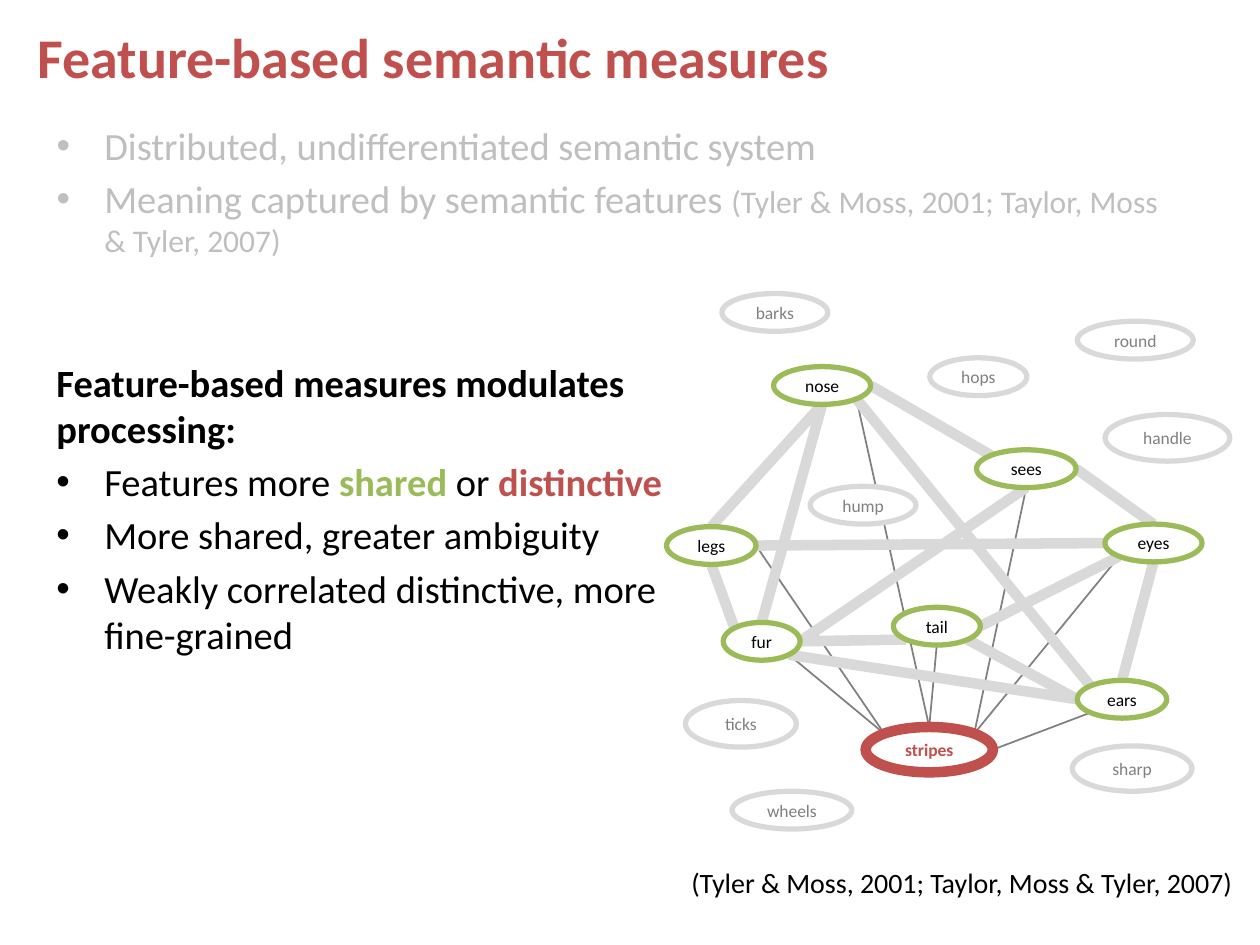
"""Build a slide on feature-based semantic measures with a network of features."""
from math import cos, radians, sin
from typing import NamedTuple

from lxml import etree
from pptx import Presentation, util as u
from pptx.dml.color import RGBColor
from pptx.enum import shapes, text
from pptx.oxml.ns import qn

FONT = "Calibri"
RED, GREEN, BLACK, WHITE = "C0504D", "9BBB59", "000000", "FFFFFF"
PALE, MID, GREY = "D9D9D9", "BFBFBF", "808080"
ANGLES = {"e": 0, "se": 45, "s": 90, "sw": 135, "w": 180, "nw": 225, "n": 270, "ne": 315}
CITE = "(Tyler & Moss, 2001; Taylor, Moss & Tyler, 2007)"


class Run(NamedTuple):
    words: str
    color: str = BLACK
    size: float = 22
    bold: bool = False


class Para(NamedTuple):
    runs: list[Run]
    bullet: bool = True


class Node(NamedTuple):
    name: str
    left: float
    top: float
    width: float
    height: float = 0.3
    edge: str = GREEN
    ink: str = BLACK


class Link(NamedTuple):
    start: str
    start_side: str
    end: str
    end_side: str


def faint(name: str, left: float, top: float, width: float, height: float = 0.3) -> Node:
    """Return a node outside the network."""
    return Node(name, left, top, width, height, PALE, GREY)


NODES = [
    Node("stripes", 6.87, 5.77, 1.01, 0.36, RED, RED),
    Node("eyes", 8.77, 4.16, 0.77),
    Node("sees", 7.75, 3.57, 0.79),
    Node("ears", 8.55, 5.4, 0.71),
    Node("fur", 5.74, 4.94, 0.61),
    Node("nose", 6.14, 2.91, 0.77),
    Node("legs", 5.29, 4.18, 0.71),
    Node("tail", 7.09, 4.82, 0.69),
    faint("hump", 6.43, 3.86, 0.84),
    faint("hops", 7.38, 2.84, 0.77),
    faint("handle", 8.77, 3.29, 0.99, 0.37),
    faint("round", 8.55, 2.55, 0.92),
    faint("ticks", 5.44, 5.56, 0.88, 0.37),
    faint("sharp", 8.51, 5.92, 0.95, 0.36),
    faint("wheels", 5.81, 6.28, 0.95),
    faint("barks", 5.73, 2.33, 0.84),
]
WEAK = [
    Link("stripes", "n", "nose", "se"),
    Link("stripes", "nw", "fur", "se"),
    Link("stripes", "nw", "legs", "e"),
    Link("stripes", "n", "tail", "s"),
    Link("stripes", "ne", "sees", "s"),
    Link("stripes", "ne", "eyes", "sw"),
    Link("stripes", "e", "ears", "sw"),
]
STRONG = [
    Link("sees", "e", "eyes", "n"),
    Link("tail", "e", "eyes", "sw"),
    Link("eyes", "s", "ears", "n"),
    Link("tail", "se", "ears", "w"),
    Link("sees", "nw", "nose", "e"),
    Link("legs", "s", "fur", "nw"),
    Link("fur", "n", "nose", "s"),
    Link("fur", "e", "tail", "sw"),
    Link("legs", "n", "nose", "s"),
    Link("legs", "e", "eyes", "w"),
    Link("nose", "se", "ears", "nw"),
    Link("sees", "s", "fur", "e"),
    Link("fur", "se", "ears", "w"),
]
INTRO = [
    Para([Run("Distributed, undifferentiated semantic system", MID)]),
    Para([Run("Meaning captured by semantic features ", MID), Run(CITE, MID, 18)]),
]
CLAIMS = [
    Para([Run("Feature-based measures modulates processing:", bold=True)], bullet=False),
    Para([Run("Features more "), Run("shared", GREEN, bold=True), Run(" or "),
          Run("distinctive", RED, bold=True)]),
    Para([Run("More shared, greater ambiguity")]),
    Para([Run("Weakly correlated distinctive, more fine-grained")]),
]


def paint(target, color: str) -> None:
    """Give a fill a solid colour."""
    target.solid()
    target.fore_color.rgb = RGBColor.from_string(color)


def write(frame, paras: list[Para], *, align=text.PP_ALIGN.LEFT,
          anchor=text.MSO_ANCHOR.TOP, wrap: bool = True) -> None:
    """Write formatted paragraphs into a text frame."""
    frame.word_wrap = wrap
    frame.vertical_anchor = anchor
    for i, para in enumerate(paras):
        line = frame.add_paragraph() if i else frame.paragraphs[0]
        line.alignment = align
        if i:
            line.space_before = u.Pt(4)
        if para.bullet:
            props = line._p.get_or_add_pPr()
            props.set("marL", str(u.Inches(0.38)))
            props.set("indent", str(u.Inches(-0.38)))
            etree.SubElement(props, qn("a:buFont")).set("typeface", "Arial")
            etree.SubElement(props, qn("a:buChar")).set("char", "•")
        for item in para.runs:
            run = line.add_run()
            run.text = item.words
            run.font.name = FONT
            run.font.size = u.Pt(item.size)
            run.font.bold = item.bold
            paint(run.font.fill, item.color)


def add_text(slide, left: float, top: float, width: float, height: float,
             paras: list[Para], **style) -> None:
    """Add a text box."""
    box = slide.shapes.add_textbox(*map(u.Inches, (left, top, width, height)))
    write(box.text_frame, paras, **style)


def find_point(node: Node, side: str) -> tuple[u.Length, u.Length]:
    """Return the point on a node's edge in a compass direction."""
    angle = radians(ANGLES[side])
    return (u.Inches(node.left + node.width / 2 * (1 + cos(angle))),
            u.Inches(node.top + node.height / 2 * (1 + sin(angle))))


def add_link(slide, link: Link, nodes: dict[str, Node], color: str, weight: float) -> None:
    """Draw a line between the edges of two nodes."""
    line = slide.shapes.add_connector(
        shapes.MSO_CONNECTOR.STRAIGHT,
        *find_point(nodes[link.start], link.start_side),
        *find_point(nodes[link.end], link.end_side))
    paint(line.line.fill, color)
    line.line.width = u.Pt(weight)
    etree.SubElement(line._element.spPr, qn("a:effectLst"))


def add_node(slide, node: Node) -> None:
    """Draw a labelled ellipse."""
    oval = slide.shapes.add_shape(
        shapes.MSO_SHAPE.OVAL,
        *map(u.Inches, (node.left, node.top, node.width, node.height)))
    main = node.edge == RED
    oval.shadow.inherit = False
    if main:
        oval.fill.background()
    else:
        paint(oval.fill, WHITE)
    paint(oval.line.fill, node.edge)
    oval.line.width = u.Pt(6 if main else 3)
    write(oval.text_frame, [Para([Run(node.name, node.ink, 10, main)], bullet=False)],
          align=text.PP_ALIGN.CENTER, anchor=text.MSO_ANCHOR.MIDDLE, wrap=False)


def main() -> None:
    """Build and save the slide."""
    deck = Presentation()
    deck.slide_width, deck.slide_height = u.Inches(10), u.Inches(7.5)
    slide = deck.slides.add_slide(deck.slide_layouts[6])
    nodes = {node.name: node for node in NODES}
    add_text(slide, 0.35, 0.92, 8.98, 2.99, INTRO)
    for links, color, weight in ((WEAK, GREY, 1), (STRONG, PALE, 6)):
        for link in links:
            add_link(slide, link, nodes, color, weight)
    for node in NODES:
        add_node(slide, node)
    add_text(slide, 0.35, 2.8, 5.04, 3.37, CLAIMS)
    add_text(slide, 0.2, 0.13, 9.37, 0.64,
             [Para([Run("Feature-based semantic measures", RED, 32, True)], bullet=False)])
    add_text(slide, 2.95, 6.82, 6.93, 0.37, [Para([Run(CITE, size=16)], bullet=False)],
             align=text.PP_ALIGN.RIGHT)
    deck.save("out.pptx")


if __name__ == "__main__":
    main()
